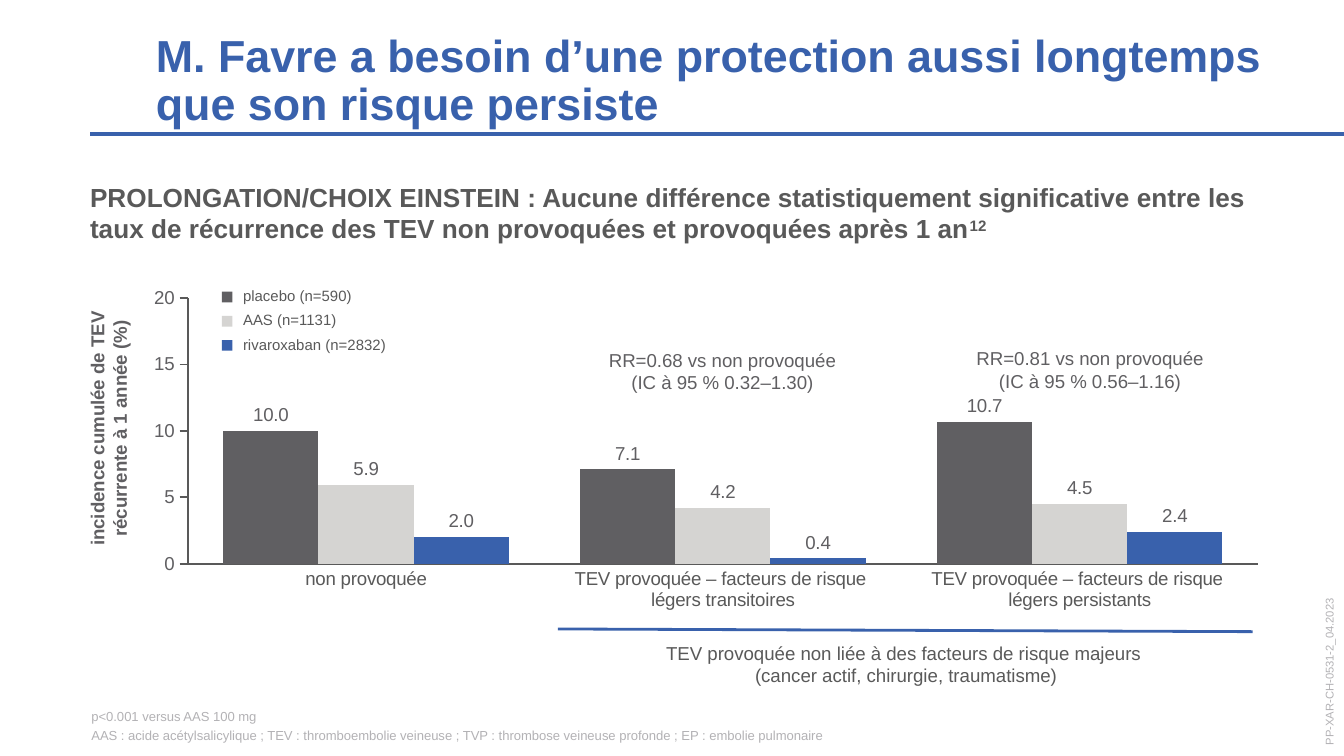
from dataclasses import dataclass

from lxml.etree import SubElement
from pptx import Presentation
from pptx.chart.data import CategoryChartData
from pptx.dml.color import RGBColor
from pptx.enum.chart import XL_CHART_TYPE as ChartType, XL_LABEL_POSITION as LabelPos, XL_TICK_MARK as Tick
from pptx.enum.shapes import MSO_CONNECTOR as Connector, MSO_SHAPE as Shape
from pptx.enum.text import MSO_ANCHOR as Anchor, MSO_AUTO_SIZE as AutoSize, PP_ALIGN as Align
from pptx.oxml import parse_xml
from pptx.oxml.ns import nsdecls, qn
from pptx.util import Inches, Pt


@dataclass(frozen=True)
class Theme:
    font: str = "Arial"
    blue: RGBColor = RGBColor(0x39, 0x61, 0xAC)
    dark: RGBColor = RGBColor(0x60, 0x5F, 0x62)
    light: RGBColor = RGBColor(0xD5, 0xD4, 0xD2)
    text: RGBColor = RGBColor(0x59, 0x59, 0x59)
    faint: RGBColor = RGBColor(0xB3, 0xB2, 0xB5)
    title_size: Pt = Pt(24)
    subtitle_size: Pt = Pt(14)
    body_size: Pt = Pt(10)
    legend_size: Pt = Pt(8)
    note_size: Pt = Pt(7)
    code_size: Pt = Pt(6)


theme = Theme()
prs = Presentation()
prs.slide_width, prs.slide_height = Inches(10), Inches(10 * 9 / 16)
slide = prs.slides.add_slide(prs.slide_layouts[5])


def write(box, place, lines, size, color, bold=False, align=Align.LEFT, anchor=Anchor.MIDDLE, inset=0):
    """Place a text shape and fill it with one paragraph per line."""
    box.left, box.top, box.width, box.height = map(Inches, place)
    frame = box.text_frame
    frame.word_wrap = True
    frame.auto_size = AutoSize.NONE
    frame.vertical_anchor = anchor
    frame.margin_left = frame.margin_right = Inches(inset)
    frame.margin_top = frame.margin_bottom = Inches(inset / 2)
    for index, line in enumerate(lines):
        paragraph = frame.add_paragraph() if index else frame.paragraphs[0]
        paragraph.text = line
        paragraph.alignment = align
        font = paragraph.font
        font.name, font.size, font.bold = theme.font, size, bold
        font.color.rgb = color
    return box


def draw_rule(x1, y1, x2, y2, width):
    rule = slide.shapes.add_connector(Connector.STRAIGHT, *map(Inches, (x1, y1, x2, y2)))
    rule.line.color.rgb = theme.blue
    rule.line.width = Pt(width)
    SubElement(rule.element.spPr, qn("a:effectLst"))


# Heading
title = write(slide.shapes.title, (1.16, 0.24, 8.56, 0.73),
              ["M. Favre a besoin d’une protection aussi longtemps que son risque persiste"],
              theme.title_size, theme.blue, bold=True, anchor=Anchor.BOTTOM)
title.text_frame.paragraphs[0].line_spacing = 0.9
draw_rule(0.67, 1, 10, 1, 2.25)

subtitle = write(slide.shapes.add_textbox(0, 0, 0, 0), (0.67, 1.35, 9.05, 0.47),
                 ["PROLONGATION/CHOIX EINSTEIN : Aucune différence statistiquement significative entre les "
                  "taux de récurrence des TEV non provoquées et provoquées après 1 an"],
                 theme.subtitle_size, theme.text, bold=True, anchor=Anchor.TOP)
reference = subtitle.text_frame.paragraphs[0].add_run()
reference.text = "12"
reference.font._element.set("baseline", "30000")

# Recurrence chart
treatments = [
    ("placebo (n=590)", theme.dark, (10, 7.1, 10.7)),
    ("AAS (n=1131)", theme.light, (5.9, 4.2, 4.5)),
    ("rivaroxaban (n=2832)", theme.blue, (2, 0.4, 2.4)),
]
recurrence = CategoryChartData()
recurrence.categories = [
    "non provoquée",
    "TEV provoquée – facteurs de risque \nlégers transitoires",
    "TEV provoquée – facteurs de risque \nlégers persistants",
]
for number, (_, _, rates) in enumerate(treatments, 1):
    recurrence.add_series(f"Series {number}", rates)
chart = slide.shapes.add_chart(ChartType.COLUMN_CLUSTERED, Inches(1), Inches(1.78),
                               Inches(8.62), Inches(2.87), recurrence).chart
chart.has_title = chart.has_legend = False
chart.font.name, chart.font.size = theme.font, theme.body_size
chart.font.color.rgb = theme.dark

plot = chart.plots[0]
plot.gap_width, plot.overlap = 75, 0
plot.vary_by_categories = False
for series, (_, color, _) in zip(plot.series, treatments):
    series.format.fill.solid()
    series.format.fill.fore_color.rgb = color
    labels = series.data_labels
    labels.show_value = True
    labels.position = LabelPos.OUTSIDE_END
    labels.number_format, labels.number_format_is_linked = "#,##0.0", False
    labels.font.name, labels.font.size = theme.font, theme.body_size
    labels.font.color.rgb = theme.dark

rates_axis, groups_axis = chart.value_axis, chart.category_axis
rates_axis.minimum_scale, rates_axis.maximum_scale, rates_axis.major_unit = 0, 20, 5
rates_axis.has_major_gridlines = False
for axis, tick, color in ((rates_axis, Tick.OUTSIDE, theme.dark), (groups_axis, Tick.NONE, theme.text)):
    axis.major_tick_mark, axis.minor_tick_mark = tick, Tick.NONE
    axis.format.line.color.rgb = theme.text
    axis.format.line.width = Pt(1)
    axis.tick_labels.font.name, axis.tick_labels.font.size = theme.font, theme.body_size
    axis.tick_labels.font.color.rgb = color

plot_area = chart._chartSpace.chart.plotArea
for old_layout in plot_area.findall(qn("c:layout")):
    plot_area.remove(old_layout)
plot_area.insert(0, parse_xml(
    f'<c:layout {nsdecls("c")}><c:manualLayout><c:layoutTarget val="inner"/>'
    '<c:xMode val="edge"/><c:yMode val="edge"/><c:x val="0.046"/><c:y val="0.153"/>'
    '<c:w val="0.924"/><c:h val="0.689"/></c:manualLayout></c:layout>'))

# Legend
for row, (name, color, _) in enumerate(treatments):
    top = 2.08 + 0.18 * row
    swatch = slide.shapes.add_shape(Shape.RECTANGLE, Inches(1.65), Inches(top + 0.09),
                                    Inches(0.08), Inches(0.08))
    swatch.shadow.inherit = False
    swatch.fill.solid()
    swatch.fill.fore_color.rgb = color
    swatch.line.fill.background()
    write(slide.shapes.add_textbox(0, 0, 0, 0), (1.71, top, 1.71, 0.24), [name],
          theme.legend_size, theme.text, inset=0.1)

# Chart annotations
annotations = [
    ((4.31, 2.54, 2.13, 0.44), "RR=0.68 vs non provoquée\n(IC à 95 % 0.32–1.30)", theme.dark),
    ((6.96, 2.53, 2.3, 0.44), "RR=0.81 vs non provoquée\n(IC à 95 % 0.56–1.16)", theme.dark),
    ((4.15, 4.72, 5.18, 0.44), "TEV provoquée non liée à des facteurs de risque majeurs \n"
                               "(cancer actif, chirurgie, traumatisme)", theme.text),
]
for place, words, color in annotations:
    write(slide.shapes.add_textbox(0, 0, 0, 0), place, [words], theme.body_size, color,
          align=Align.CENTER, inset=0.1)
draw_rule(4.15, 4.68, 9.32, 4.7, 1.5)

axis_title = write(slide.shapes.add_textbox(0, 0, 0, 0), (-0.19, 2.97, 1.99, 0.44),
                   ["incidence cumulée de TEV récurrente à 1 année (%)"],
                   theme.body_size, theme.dark, bold=True, align=Align.CENTER, inset=0.1)
axis_title.rotation = 270

# Footnotes and document code
footnotes = write(slide.shapes.add_textbox(0, 0, 0, 0), (0.68, 5.27, 8.65, 0.26),
                  ["p<0.001 versus AAS 100 mg",
                   "AAS : acide acétylsalicylique ; TEV : thromboembolie veineuse ; "
                   "TVP : thrombose veineuse profonde ; EP : embolie pulmonaire"],
                  theme.note_size, theme.faint, anchor=Anchor.BOTTOM)
for note in footnotes.text_frame.paragraphs:
    note.space_after = Pt(2)

document_code = write(slide.shapes.add_textbox(0, 0, 0, 0), (9.19, 4.69, 1.4, 0.31),
                      ["PP-XAR-CH-0531-2_04.2023"], theme.code_size, theme.faint)
document_code.rotation = 270

prs.save("out.pptx")
